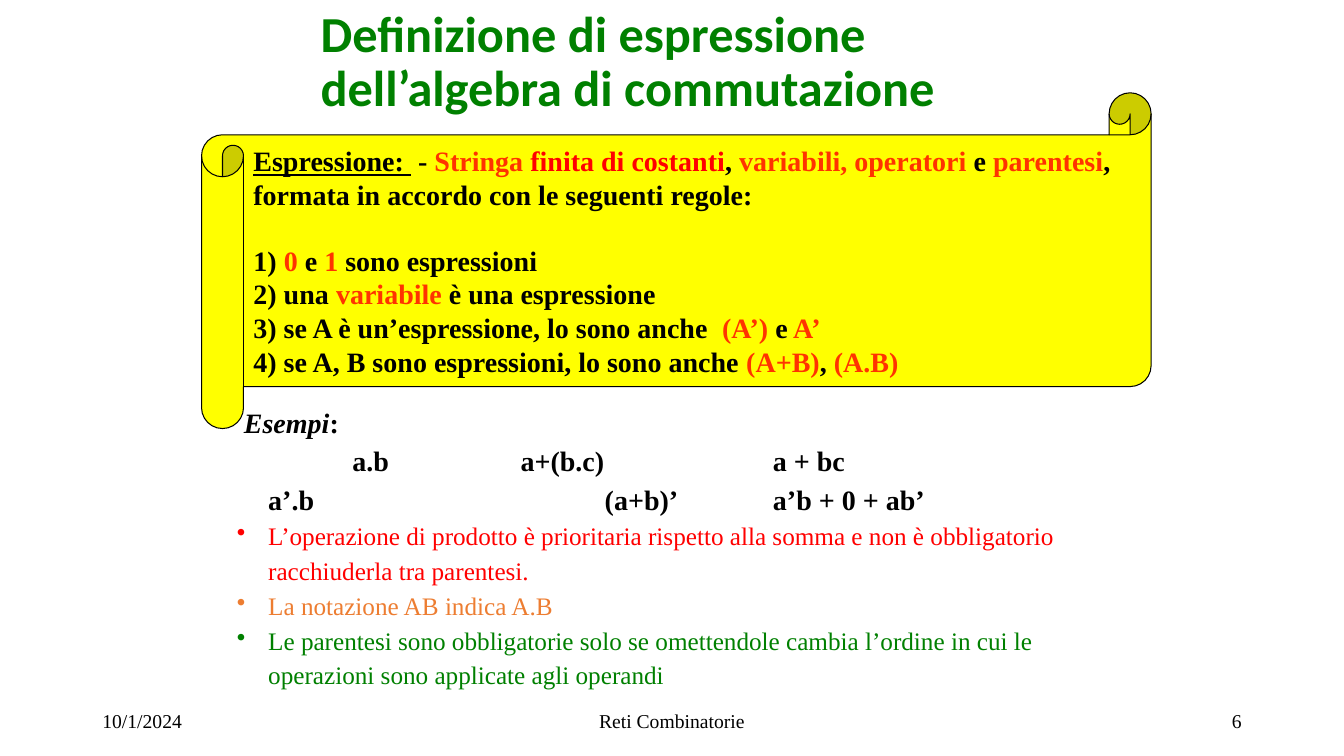
from lxml.etree import SubElement
from pptx import Presentation
from pptx.dml.color import RGBColor
from pptx.enum.shapes import MSO_SHAPE
from pptx.enum.text import MSO_ANCHOR as Anchor, PP_ALIGN as Align
from pptx.oxml.ns import qn
from pptx.util import Cm, Pt

BLACK, RED, ORANGE_RED, GREEN = "000000", "FF0000", "FF3300", "008000"


def color(value):
    return RGBColor.from_string(value)


def style(paragraph, size, value=BLACK, bold=False, name="Times New Roman"):
    font = paragraph.font
    font.name, font.size, font.bold = name, Pt(size), bold
    font.color.rgb = color(value)


deck = Presentation()
deck.slide_width, deck.slide_height = Cm(33.87), Cm(19.05)
slide = deck.slides.add_slide(deck.slide_layouts[6])
shapes = slide.shapes

for text, left, width, align in [
    ("10/1/2024", 2.33, 7.62, Align.LEFT),
    ("Reti Combinatorie", 11.22, 11.43, Align.CENTER),
    ("6", 23.92, 7.62, Align.RIGHT),
]:
    footer = shapes.add_textbox(Cm(left), Cm(17.66), Cm(width), Cm(1.01)).text_frame
    footer.word_wrap = True
    footer.vertical_anchor = Anchor.MIDDLE
    line = footer.paragraphs[0]
    line.text = text
    line.alignment = align
    style(line, 14)

title = shapes.add_textbox(Cm(7.83), Cm(0.22), Cm(19.05), Cm(2.75)).text_frame
title.word_wrap = True
title.vertical_anchor = Anchor.MIDDLE
heading = title.paragraphs[0]
heading.text = "Definizione di espressione dell’algebra di commutazione"
heading.line_spacing = 0.9
style(heading, 36, GREEN, True, "Calibri")

examples_box = shapes.add_textbox(Cm(5.72), Cm(9.96), Cm(22.86), Cm(7.24))
examples_box.fill.solid()
examples_box.fill.fore_color.rgb = color("FFFFFF")
examples = examples_box.text_frame
examples.word_wrap = True

for index, (text, size, value, bulleted) in enumerate([
    (" Esempi:", 20, BLACK, False),
    ("\t\ta.b\t\ta+(b.c)\t\t\ta + bc", 20, BLACK, False),
    ("\ta’.b\t\t\t\t(a+b)’\t\ta’b + 0 + ab’", 20, BLACK, False),
    ("L’operazione di prodotto è prioritaria rispetto alla somma e non è "
     "obbligatorio racchiuderla tra parentesi.", 18, RED, True),
    ("La notazione AB indica A.B", 18, "ED7D31", True),
    ("Le parentesi sono obbligatorie solo se omettendole cambia l’ordine in cui le "
     "operazioni sono applicate agli operandi", 18, GREEN, True),
]):
    line = examples.add_paragraph() if index else examples.paragraphs[0]
    line.line_spacing = 1.15
    style(line, size, value, not bulleted)
    label, colon, rest = text.partition("Esempi")
    for part in filter(None, (label, colon, rest)):
        run = line.add_run()
        run.text = part
        if part == "Esempi":
            run.font.italic = True
    properties = line._p.get_or_add_pPr()
    properties.set("marL", str(Cm(0.79)))
    properties.set("indent", str(-Cm(0.79)))
    properties.set("defTabSz", str(Cm(2.12)))
    if bulleted:
        bullet = SubElement(properties, qn("a:buChar"))
        bullet.set("char", "•")
        properties.find(qn("a:defRPr")).addprevious(bullet)

scroll = shapes.add_shape(
    MSO_SHAPE.HORIZONTAL_SCROLL, Cm(5.08), Cm(2.34), Cm(23.93), Cm(8.46))
scroll.adjustments[0] = 0.125
scroll.shadow.inherit = False
scroll.fill.solid()
scroll.fill.fore_color.rgb = color("FFFF00")
scroll.line.color.rgb = color(BLACK)
scroll.line.width = Pt(0.75)
definition = scroll.text_frame
definition.word_wrap = False
definition.vertical_anchor = Anchor.MIDDLE

rules = [
    [("Espressione: ", BLACK), (" - ", BLACK), ("Stringa ", ORANGE_RED),
     ("finita di costanti", RED), (", ", BLACK), ("variabili, operatori", ORANGE_RED),
     (" e ", BLACK), ("parentesi", ORANGE_RED), (", ", BLACK), ("\n", BLACK),
     ("formata in accordo con le seguenti regole:", BLACK)],
    [("1)", BLACK), (" 0", ORANGE_RED), (" e ", BLACK), ("1", ORANGE_RED),
     (" sono espressioni", BLACK)],
    [("2) una ", BLACK), ("variabile", ORANGE_RED), (" è una espressione", BLACK)],
    [("3) se A è un’espressione, lo sono anche  ", BLACK), ("(A’) ", ORANGE_RED),
     ("e", BLACK), (" A’", ORANGE_RED)],
    [("4) se A, B sono espressioni, lo sono anche ", BLACK), ("(A+B)", ORANGE_RED),
     (", ", BLACK), ("(A.B)", ORANGE_RED)],
]
for index, parts in enumerate(rules):
    line = definition.add_paragraph() if index else definition.paragraphs[0]
    line.alignment = Align.LEFT
    style(line, 20, bold=True)
    if index == 1:
        line.space_before = Pt(23)
    for text, value in parts:
        if text == "\n":
            line.add_line_break()
            continue
        run = line.add_run()
        run.text = text
        run.font.color.rgb = color(value)
        if text.startswith("Espressione"):
            run.font.underline = True

deck.save("out.pptx")
